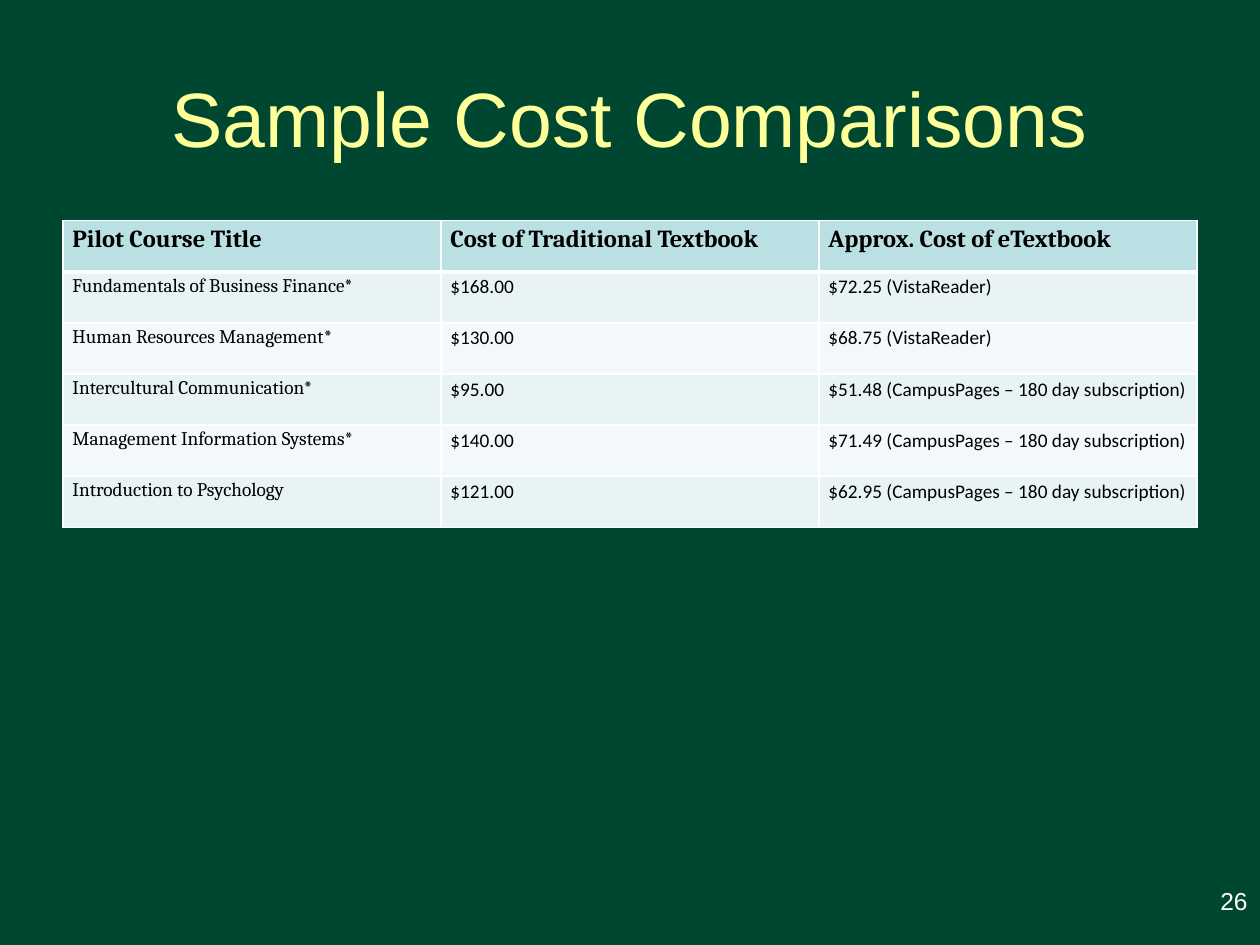
from dataclasses import dataclass

from lxml.etree import SubElement
from pptx import Presentation
from pptx.dml.color import RGBColor
from pptx.enum.text import MSO_ANCHOR, PP_ALIGN
from pptx.oxml.ns import qn
from pptx.slide import Slide
from pptx.table import _Cell
from pptx.text.text import _Paragraph
from pptx.util import Cm, Pt

GREEN = RGBColor(0x00, 0x47, 0x31)
YELLOW = RGBColor(0xFF, 0xFF, 0x99)
WHITE = RGBColor(0xFF, 0xFF, 0xFF)
BLACK = RGBColor(0x00, 0x00, 0x00)
HEADER_FILL = RGBColor(0xBB, 0xE0, 0xE3)
BAND_FILLS = (RGBColor(0xE7, 0xF3, 0xF4), RGBColor(0xF3, 0xF9, 0xFA))

HEADINGS = ("Pilot Course Title", "Cost of Traditional Textbook", "Approx. Cost of eTextbook")
MARGIN = Cm(1.27)
COLUMN_WIDTH = Cm(7.62)
ROW_HEIGHT = Cm(1.03)
THIN = Pt(1)
THICK = Pt(3)


@dataclass(frozen=True)
class Course:
    title: str
    textbook_cost: str
    etextbook_cost: str


COURSES = (
    Course("Fundamentals of Business Finance*", "$168.00", "$72.25 (VistaReader)"),
    Course("Human Resources Management*", "$130.00", "$68.75 (VistaReader)"),
    Course("Intercultural Communication*", "$95.00", "$51.48 (CampusPages – 180 day subscription)"),
    Course("Management Information Systems*", "$140.00", "$71.49 (CampusPages – 180 day subscription)"),
    Course("Introduction to Psychology", "$121.00", "$62.95 (CampusPages – 180 day subscription)"),
)


def write(para: _Paragraph, text: str, font: str, size: int, color: RGBColor, bold: bool = False) -> None:
    para.text = text
    for span in para.runs:
        span.font.name = font
        span.font.size = Pt(size)
        span.font.color.rgb = color
        span.font.bold = bold


def set_borders(cell: _Cell, top: int, bottom: int) -> None:
    properties = cell._tc.get_or_add_tcPr()
    for side, width in (("L", THIN), ("R", THIN), ("T", top), ("B", bottom)):
        line = SubElement(properties, qn(f"a:ln{side}"), w=str(width))
        fill = SubElement(line, qn("a:solidFill"))
        SubElement(fill, qn("a:srgbClr"), val=str(WHITE))


def format_cell(cell: _Cell, fill: RGBColor) -> None:
    cell.margin_left = cell.margin_right = Cm(0.19)
    cell.margin_top = cell.margin_bottom = 0
    cell.fill.solid()
    cell.fill.fore_color.rgb = fill
    cell.text_frame.paragraphs[0].line_spacing = 1.15


def add_title(page: Slide) -> None:
    title = page.shapes.title
    title.left, title.top, title.width, title.height = MARGIN, Cm(0.76), Cm(22.86), Cm(3.18)
    title.text_frame.vertical_anchor = MSO_ANCHOR.MIDDLE
    para = title.text_frame.paragraphs[0]
    write(para, "Sample Cost Comparisons", "Arial", 44, YELLOW)
    para.alignment = PP_ALIGN.CENTER


def add_cost_table(page: Slide) -> None:
    row_count, column_count = len(COURSES) + 1, len(HEADINGS)
    table = page.shapes.add_table(
        row_count, column_count, MARGIN, Cm(4.45), COLUMN_WIDTH * column_count, ROW_HEIGHT * row_count
    ).table
    for column, heading in enumerate(HEADINGS):
        cell = table.cell(0, column)
        set_borders(cell, THIN, THICK)
        format_cell(cell, HEADER_FILL)
        write(cell.text_frame.paragraphs[0], heading, "Cambria", 14, BLACK, True)
    for row, course in enumerate(COURSES, start=1):
        texts = (course.title, course.textbook_cost, course.etextbook_cost)
        for column, text in enumerate(texts):
            cell = table.cell(row, column)
            set_borders(cell, THICK if row == 1 else THIN, THIN)
            format_cell(cell, BAND_FILLS[(row - 1) % 2])
            font = "Calibri" if column else "Cambria"
            write(cell.text_frame.paragraphs[0], text, font, 11, BLACK)


def add_page_number(page: Slide) -> None:
    box = page.shapes.add_textbox(Cm(19.48), Cm(17.73), Cm(5.92), Cm(1.32))
    box.text_frame.word_wrap = True
    para = box.text_frame.paragraphs[0]
    write(para, "26", "Arial", 14, WHITE)
    para.alignment = PP_ALIGN.RIGHT


def main() -> None:
    deck = Presentation()
    deck.slide_width, deck.slide_height = Cm(25.4), Cm(19.05)
    page = deck.slides.add_slide(deck.slide_layouts[5])
    page.background.fill.solid()
    page.background.fill.fore_color.rgb = GREEN
    add_title(page)
    add_cost_table(page)
    add_page_number(page)
    deck.save("out.pptx")


if __name__ == "__main__":
    main()
